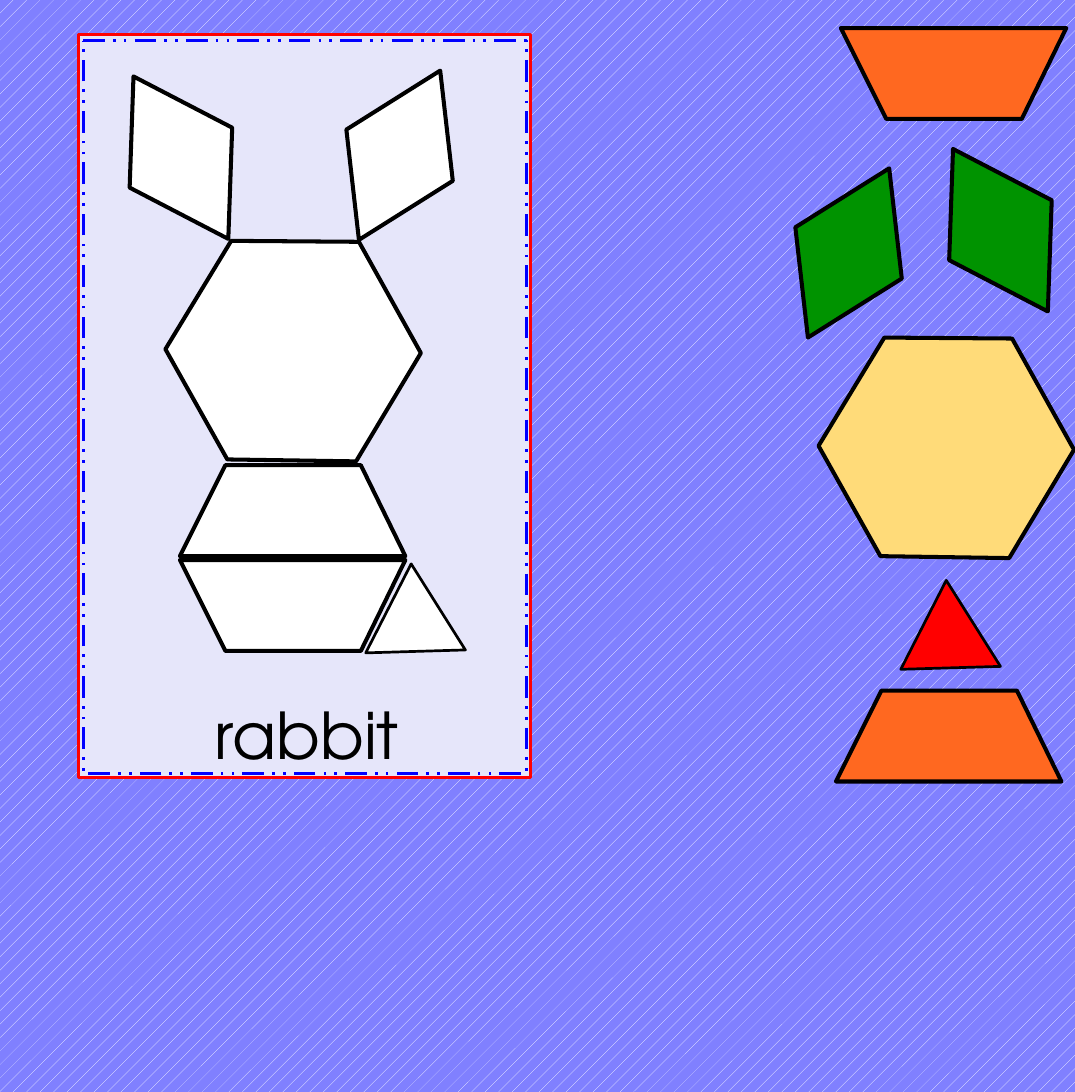
from pptx import Presentation
from pptx.dml.color import RGBColor
from pptx.enum.dml import MSO_LINE, MSO_PATTERN
from pptx.util import Inches, Pt

WHITE = RGBColor(0xFF, 0xFF, 0xFF)
BLACK = RGBColor(0x00, 0x00, 0x00)
PERIWINKLE = RGBColor(0x80, 0x80, 0xFF)
LAVENDER = RGBColor(0xE6, 0xE6, 0xFA)
RED = RGBColor(0xFF, 0x00, 0x00)
BLUE = RGBColor(0x00, 0x00, 0xFF)
GREEN = RGBColor(0x00, 0x93, 0x00)
ORANGE = RGBColor(0xFF, 0x68, 0x20)
YELLOW = RGBColor(0xFF, 0xDB, 0x79)

# Outline on the card, line width, shift to the loose piece, loose colour
TAIL = ([(3.78, 6.75), (4.81, 6.72), (4.25, 5.83)], 2, (5.53, 0.17), RED)
RIGHT_EAR = ([(4.68, 1.87), (3.71, 2.48), (3.58, 1.34), (4.55, 0.73)],
             3, (4.64, 1.01), GREEN)
CHEST = ([(1.86, 5.75), (2.33, 4.81), (3.73, 4.81), (4.19, 5.75)],
         3, (6.78, 2.33), ORANGE)
LEGS = ([(1.86, 5.79), (2.33, 6.73), (3.73, 6.73), (4.19, 5.79)],
        3, (6.83, -5.5), ORANGE)
HEAD = ([(2.35, 4.75), (1.71, 3.61), (2.39, 2.49),
         (3.71, 2.5), (4.35, 3.65), (3.68, 4.77)], 3, (6.75, 1), YELLOW)
LEFT_EAR = ([(1.34, 1.94), (1.38, 0.79), (2.4, 1.32), (2.36, 2.47)],
            3, (8.47, 0.75), GREEN)
PIECES = [TAIL, RIGHT_EAR, CHEST, LEGS, HEAD, LEFT_EAR]


def paint_background(slide):
    fill = slide.background.fill
    fill.patterned()
    fill.pattern = MSO_PATTERN.PERCENT_5
    fill.fore_color.rgb = WHITE
    fill.back_color.rgb = PERIWINKLE


def add_polygon(slide, outline, fill_color, line_color, width, shift=(0, 0)):
    points = [(Inches(x + shift[0]), Inches(y + shift[1])) for x, y in outline]
    builder = slide.shapes.build_freeform(*points[0])
    builder.add_line_segments(points[1:], close=True)
    shape = builder.convert_to_shape()
    shape.shadow.inherit = False
    shape.fill.solid()
    shape.fill.fore_color.rgb = fill_color
    shape.line.color.rgb = line_color
    shape.line.width = Pt(width)
    return shape


def add_frame(slide, left, top, right, bottom, line_color):
    corners = [(left, top), (right, top), (right, bottom), (left, bottom)]
    return add_polygon(slide, corners, LAVENDER, line_color, 2)


def add_label(slide, text, left, top, width, height):
    box = slide.shapes.add_textbox(
        Inches(left), Inches(top), Inches(width), Inches(height))
    box.text_frame.word_wrap = True
    box.text_frame.text = text
    span = box.text_frame.paragraphs[0].runs[0]
    span.font.name = "TeX Gyre Adventor"
    span.font.size = Pt(48)
    span.font.color.rgb = BLACK


def main():
    deck = Presentation()
    deck.slide_width = Inches(11.11)
    deck.slide_height = Inches(11.29)
    slide = deck.slides.add_slide(deck.slide_layouts[6])
    paint_background(slide)

    # Card with its double border
    add_frame(slide, 0.81, 0.36, 5.48, 8.04, RED)
    inner_frame = add_frame(slide, 0.86, 0.42, 5.44, 8, BLUE)
    inner_frame.line.dash_style = MSO_LINE.DASH_DOT_DOT

    # Blank rabbit on the card
    for outline, width, _, _ in PIECES:
        add_polygon(slide, outline, WHITE, BLACK, width)
    add_label(slide, "rabbit", 2.12, 7.14, 2.75, 0.91)

    # Loose coloured pieces
    for outline, width, shift, color in PIECES:
        add_polygon(slide, outline, color, BLACK, width, shift)

    deck.save("out.pptx")


if __name__ == "__main__":
    main()
